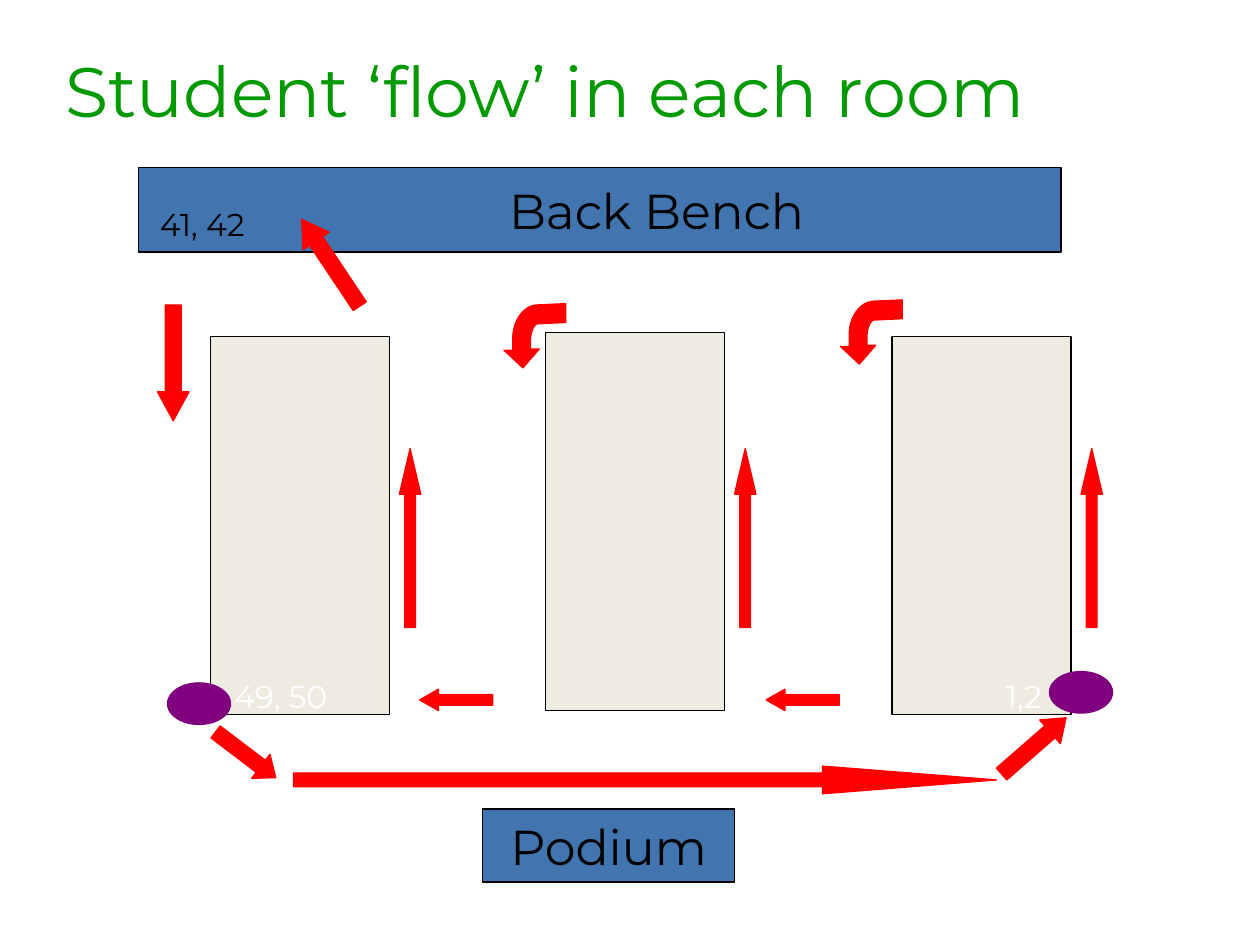
from dataclasses import dataclass

from pptx import Presentation
from pptx.dml.color import RGBColor
from pptx.enum import shapes, text
from pptx.util import Inches, Pt


@dataclass(frozen=True)
class Theme:
    font: str = "Montserrat"
    title: str = "009900"
    dark: str = "000000"
    light: str = "FFFFFF"
    table: str = "EEECE1"
    bench: str = "4274AF"
    arrow: str = "FF0000"
    station: str = "800080"
    title_size: int = 40
    name_size: int = 28
    label_size: int = 18
    line_width: float = 0.75


THEME = Theme()
KIND = shapes.MSO_SHAPE
ALIGN = text.PP_ALIGN
ANCHOR = text.MSO_ANCHOR


def paint(s, fill, line=None):
    s.shadow.inherit = False
    s.fill.solid()
    s.fill.fore_color.rgb = RGBColor.from_string(fill)
    if line:
        s.line.color.rgb = RGBColor.from_string(line)
        s.line.width = Pt(THEME.line_width)
    else:
        s.line.fill.background()
    return s


def write(s, words, size, color=THEME.dark, align=ALIGN.CENTER,
          anchor=ANCHOR.MIDDLE, left=0.1, right=0.1, bottom=0.05, wrap=False):
    tf = s.text_frame
    tf.word_wrap = wrap
    tf.vertical_anchor = anchor
    tf.margin_left, tf.margin_right = Inches(left), Inches(right)
    tf.margin_bottom = Inches(bottom)
    p = tf.paragraphs[0]
    p.alignment = align
    r = p.add_run()
    r.text = words
    r.font.name = THEME.font
    r.font.size = Pt(size)
    r.font.color.rgb = RGBColor.from_string(color)


prs = Presentation()
prs.slide_width, prs.slide_height = Inches(10), Inches(7.5)
sp = prs.slides.add_slide(prs.slide_layouts[6]).shapes

# Student tables, with the station numbers on the outer two
tables = []
for x, y in ((1.67, 2.67), (4.33, 2.64), (7.08, 2.67)):
    s = sp.add_shape(KIND.RECTANGLE, Inches(x), Inches(y), Inches(1.42), Inches(3))
    tables.append(paint(s, THEME.table, THEME.dark))
write(tables[0], "49, 50", THEME.label_size, THEME.light, ALIGN.LEFT,
      ANCHOR.BOTTOM, left=0.19, bottom=0)
write(tables[2], "1,2", THEME.label_size, THEME.light, ALIGN.RIGHT,
      ANCHOR.BOTTOM, right=0.23, bottom=0)

# Podium and back bench
podium = sp.add_shape(KIND.RECTANGLE, Inches(3.83), Inches(6.42), Inches(2), Inches(0.58))
write(paint(podium, THEME.bench, THEME.dark), "Podium", THEME.name_size)
bench = sp.add_shape(KIND.RECTANGLE, Inches(1.1), Inches(1.33), Inches(7.32), Inches(0.67))
write(paint(bench, THEME.bench, THEME.dark), "Back Bench", THEME.name_size,
      left=1, right=0.1)
label = sp.add_shape(KIND.RECTANGLE, Inches(1.17), Inches(1.58), Inches(1.03), Inches(0.4))
write(paint(label, THEME.bench), "41, 42", THEME.label_size, align=ALIGN.LEFT)

# Straight arrows: kind, left, top, width, height, rotation, head length
arrows = [
    (KIND.UP_ARROW, 2.5, 1.67, 0.25, 0.83, 326.2, 0.83),
    (KIND.DOWN_ARROW, 1.25, 2.42, 0.25, 0.92, 0, 0.92),
    (KIND.RIGHT_ARROW, 2.33, 6.08, 5.58, 0.22, 0, 6.28),
    (KIND.UP_ARROW, 8.08, 5.58, 0.25, 0.68, 48.9, 0.68),
    (KIND.DOWN_ARROW, 1.83, 5.69, 0.24, 0.6, 307.2, 0.62),
]
arrows += [(KIND.UP_ARROW, x, 3.56, 0.17, 1.42, 0, 2.13) for x in (3.17, 5.83, 8.58)]
arrows += [(KIND.LEFT_ARROW, x, 5.47, 0.58, 0.17, 0, 0.88) for x in (3.33, 6.08)]
for kind, x, y, w, h, turn, head in arrows:
    s = sp.add_shape(kind, Inches(x), Inches(y), Inches(w), Inches(h))
    s.rotation = turn
    s.adjustments[0], s.adjustments[1] = 0.5, head
    paint(s, THEME.arrow, THEME.arrow)

# Curved arrows: straight points, and bends given as four Bezier points
outer = ((0.07, 0.29), (0.06, 0.14), (0.15, 0), (0.27, 0))
inner = ((0.27, 0.15), (0.24, 0.15), (0.21, 0.21), (0.21, 0.29))
bends = []
for a, b, c, d in (outer, inner):
    bends.append([])
    for t in (i / 12 for i in range(13)):
        bends[-1].append(tuple(
            (1 - t) ** 3 * a[k] + 3 * (1 - t) ** 2 * t * b[k]
            + 3 * (1 - t) * t ** 2 * c[k] + t ** 3 * d[k] for k in (0, 1)))
outline = [(0.15, 0.5), (0, 0.36), (0.07, 0.36), *bends[0],
           (0.49, -0.01), (0.49, 0.14), *bends[1], (0.21, 0.35), (0.28, 0.35)]
for x, y in ((4, 2.42), (6.67, 2.39)):
    points = [(Inches(x + dx), Inches(y + dy)) for dx, dy in outline]
    pen = sp.build_freeform(*points[0])
    pen.add_line_segments(points[1:], close=True)
    paint(pen.convert_to_shape(), THEME.arrow, THEME.arrow)

# Title
title = sp.add_textbox(Inches(0.42), Inches(0.33), Inches(8.75), Inches(0.77))
write(title, "Student ‘flow’ in each room", THEME.title_size, THEME.title,
      ALIGN.LEFT, ANCHOR.TOP, wrap=True)

# First and last stations
for x, y in ((1.33, 5.42), (8.33, 5.33)):
    s = sp.add_shape(KIND.OVAL, Inches(x), Inches(y), Inches(0.5), Inches(0.33))
    paint(s, THEME.station, THEME.station)

prs.save("out.pptx")
